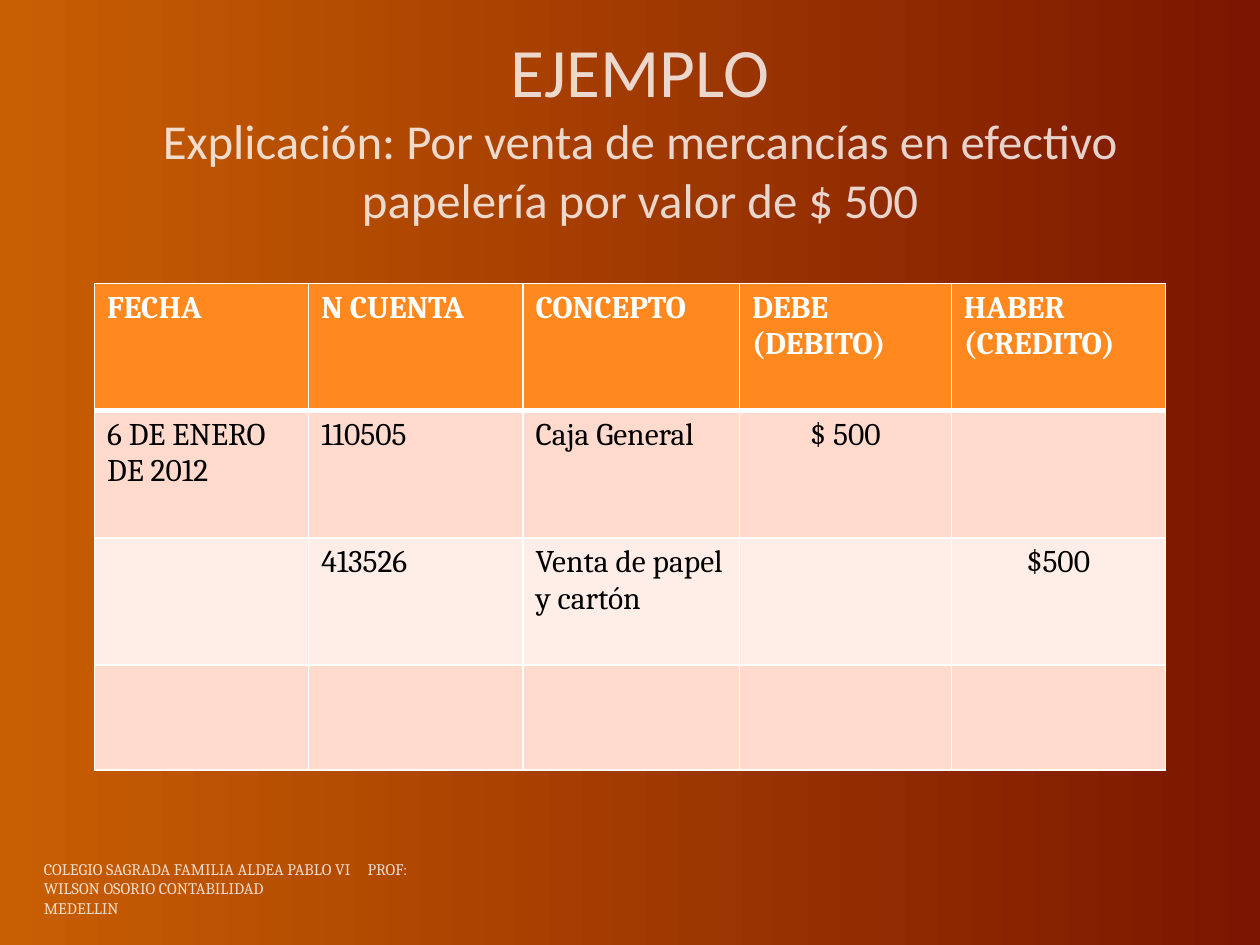
from lxml.etree import SubElement
from pptx import Presentation
from pptx.dml.color import RGBColor
from pptx.enum.text import MSO_ANCHOR as Anchor, MSO_AUTO_SIZE as AutoSize, PP_ALIGN as Align
from pptx.oxml import parse_xml
from pptx.oxml.ns import nsdecls, qn
from pptx.util import Pt

COLORS = {
    "amber": "C85F02", "maroon": "7B1600", "white": "FFFFFF", "black": "000000",
    "header": "FF881F", "band_dark": "FFDACD", "band_light": "FFEDE8",
}
COLUMN_WIDTHS = [122.4, 122.4, 123.84, 120.96, 122.4]
ROW_HEIGHTS = [72.72, 72.72, 72.72, 59.76]
ENTRIES = [
    ["FECHA", "N CUENTA", "CONCEPTO", "DEBE (DEBITO)", "HABER (CREDITO)"],
    ["6 DE ENERO DE 2012", "110505", "Caja General", "$ 500", ""],
    ["", "413526", "Venta de papel y cartón", "", "$500"],
    [""] * 5,
]


def color(name):
    """Return a named colour."""
    return RGBColor.from_string(COLORS[name])


def style_translucent(paragraph, font_name):
    """Give a paragraph its font in white at 80 % opacity."""
    paragraph.font.name = font_name
    paragraph.font.color.rgb = color("white")
    for element in paragraph._p.iter(qn("a:srgbClr")):
        SubElement(element, qn("a:alpha"), val="80000")


def paint_background(slide):
    """Fill the slide with a left-to-right gradient."""
    fill = slide.background.fill
    fill.gradient()
    fill.gradient_angle = 0
    for stop, name in zip(fill.gradient_stops, ("amber", "maroon")):
        stop.color.rgb = color(name)


def place(shape, left, top, width, height):
    """Move a shape into a box given in points."""
    shape.left, shape.top, shape.width, shape.height = map(Pt, (left, top, width, height))


def add_heading(slide, left, top, width, height):
    """Write the title and its explanation in the title placeholder."""
    title = slide.shapes.title
    place(title, left, top, width, height)
    frame = title.text_frame
    frame.auto_size, frame.vertical_anchor = AutoSize.NONE, Anchor.BOTTOM
    paragraph = frame.paragraphs[0]
    paragraph.alignment = Align.CENTER
    style_translucent(paragraph, "Calibri")
    heading = paragraph.add_run()
    heading.text, heading.font.size = "EJEMPLO", Pt(39.6)
    paragraph.add_line_break()
    explanation = paragraph.add_run()
    explanation.text = "Explicación: Por venta de mercancías en efectivo papelería por valor de $ 500"
    explanation.font.size = Pt(27.9)


def set_borders(cell, bottom_width, top_width):
    """Draw white borders around a cell."""
    widths = {"L": 1, "R": 1, "T": top_width, "B": bottom_width}
    properties = cell._tc.get_or_add_tcPr()
    for index, (side, width) in enumerate(widths.items()):
        properties.insert(index, parse_xml(
            f'<a:ln{side} {nsdecls("a")} w="{Pt(width)}"><a:solidFill>'
            f'<a:srgbClr val="{COLORS["white"]}"/></a:solidFill></a:ln{side}>'))


def add_ledger(slide, left, top):
    """Add the journal entry table."""
    box = map(Pt, (left, top, sum(COLUMN_WIDTHS), sum(ROW_HEIGHTS)))
    table = slide.shapes.add_table(len(ENTRIES), len(ENTRIES[0]), *box).table
    for column, width in zip(table.columns, COLUMN_WIDTHS):
        column.width = Pt(width)
    for r, (row, height) in enumerate(zip(table.rows, ROW_HEIGHTS)):
        row.height = Pt(height)
        is_header = r == 0
        fill = "header" if is_header else "band_dark" if r % 2 else "band_light"
        for c, cell in enumerate(row.cells):
            cell.fill.solid()
            cell.fill.fore_color.rgb = color(fill)
            set_borders(cell, 3 if is_header else 1, 3 if r == 1 else 1)
            cell.text = ENTRIES[r][c]
            paragraph = cell.text_frame.paragraphs[0]
            paragraph.alignment = Align.CENTER if r and c >= 3 else Align.LEFT
            font = paragraph.font
            font.name, font.size, font.bold = "Cambria", Pt(18), is_header
            font.color.rgb = color("white" if is_header else "black")


def add_school_note(slide, left, top, width, height):
    """Add the school and teacher note at the foot of the slide."""
    frame = slide.shapes.add_textbox(*map(Pt, (left, top, width, height))).text_frame
    frame.word_wrap, frame.vertical_anchor = True, Anchor.BOTTOM
    frame.text = "COLEGIO SAGRADA FAMILIA ALDEA PABLO VI\tPROF: WILSON OSORIO CONTABILIDAD\nMEDELLIN"
    tabs = SubElement(frame.paragraphs[0]._p.get_or_add_pPr(), qn("a:tabLst"))
    SubElement(tabs, qn("a:tab"), pos=str(Pt(185)), algn="l")
    for paragraph in frame.paragraphs:
        style_translucent(paragraph, "Cambria")
        paragraph.font.size = Pt(9.2)


def main():
    """Build and save the slide."""
    presentation = Presentation()
    presentation.slide_width, presentation.slide_height = Pt(720), Pt(540)
    slide = presentation.slides.add_slide(presentation.slide_layouts.get_by_name("Title Only"))
    paint_background(slide)
    add_heading(slide, 54, 71.28, 623.52, 62.64)
    add_ledger(slide, 54, 162)
    add_school_note(slide, 18, 491.04, 228.24, 36.72)
    presentation.save("out.pptx")


if __name__ == "__main__":
    main()
